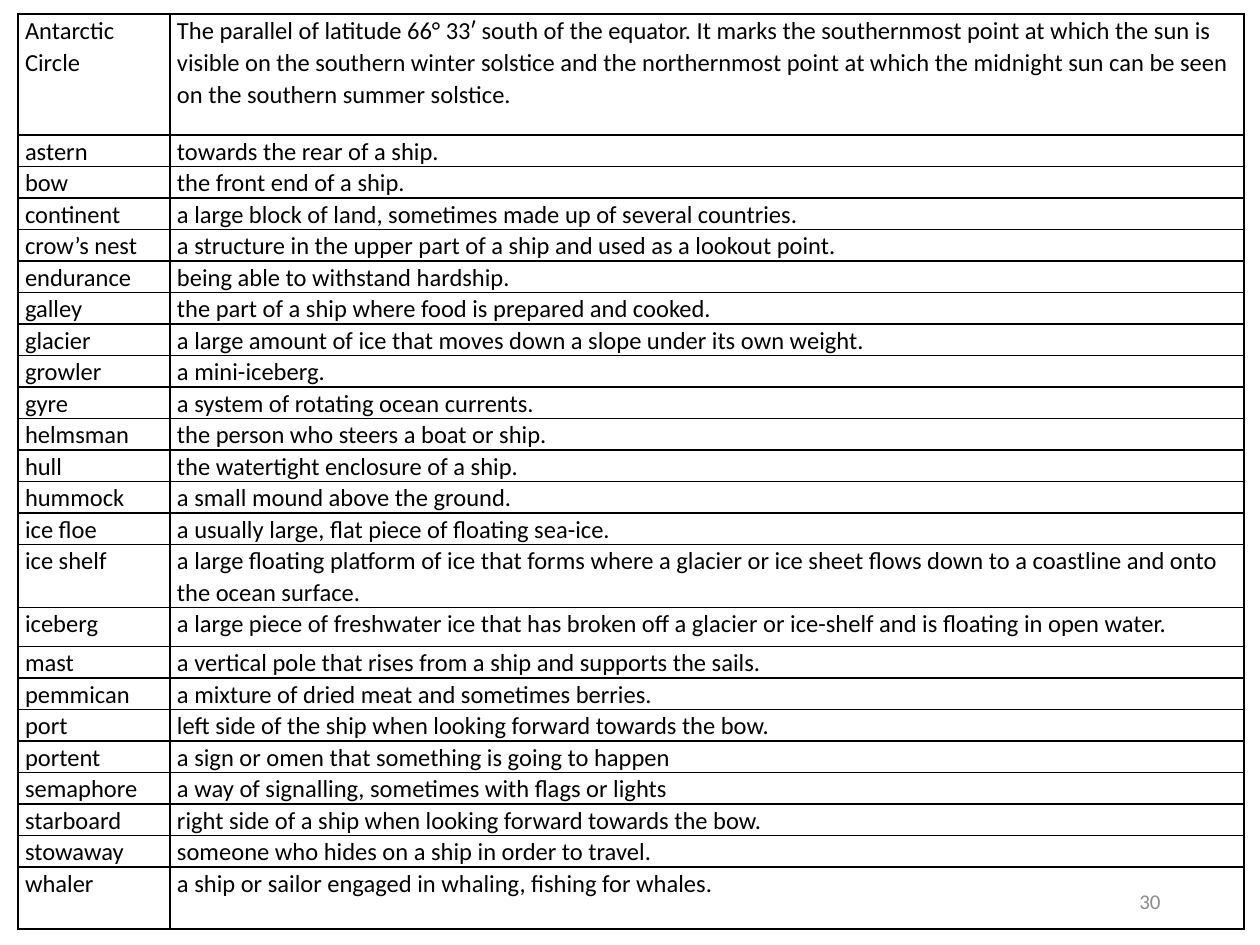
import typing

import pptx
import pptx.dml.color
import pptx.enum.text
import pptx.oxml
import pptx.oxml.ns
import pptx.util

PX_PER_INCH = 126
FONT = "Calibri"
BLACK = pptx.dml.color.RGBColor(0x00, 0x00, 0x00)
GREY = pptx.dml.color.RGBColor(0x8C, 0x8C, 0x8C)

TABLE_LEFT, TABLE_TOP, TABLE_HEIGHT = 18, 14, 886
TERM_WIDTH, MEANING_WIDTH = 152, 1074
ROW_HEIGHT = 29
CELL_INSET = 7


class Entry(typing.NamedTuple):
    term: str
    meaning: str
    height: int = ROW_HEIGHT


GLOSSARY = [
    Entry(
        "Antarctic Circle",
        "The parallel of latitude 66° 33ʹ south of the equator. It marks the "
        "southernmost point at which the sun is visible on the southern winter "
        "solstice and the northernmost point at which the midnight sun can be "
        "seen on the southern summer solstice.",
        121,
    ),
    Entry("astern", "towards the rear of a ship."),
    Entry("bow", "the front end of a ship."),
    Entry("continent", "a large block of land, sometimes made up of several countries."),
    Entry("crow’s nest", "a structure in the upper part of a ship and used as a lookout point."),
    Entry("endurance", "being able to withstand hardship."),
    Entry("galley", "the part of a ship where food is prepared and cooked."),
    Entry("glacier", "a large amount of ice that moves down a slope under its own weight."),
    Entry("growler", "a mini-iceberg."),
    Entry("gyre", "a system of rotating ocean currents."),
    Entry("helmsman", "the person who steers a boat or ship."),
    Entry("hull", "the watertight enclosure of a ship."),
    Entry("hummock", "a small mound above the ground."),
    Entry("ice floe", "a usually large, flat piece of floating sea-ice."),
    Entry(
        "ice shelf",
        "a large floating platform of ice that forms where a glacier or ice sheet "
        "flows down to a coastline and onto the ocean surface.",
        60,
    ),
    Entry(
        "iceberg",
        "a large piece of freshwater ice that has broken off a glacier or ice-shelf "
        "and is floating in open water.",
        39,
    ),
    Entry("mast", "a vertical pole that rises from a ship and supports the sails."),
    Entry("pemmican", "a mixture of dried meat and sometimes berries."),
    Entry("port", "left side of the ship when looking forward towards the bow."),
    Entry("portent", "a sign or omen that something is going to happen"),
    Entry("semaphore", "a way of signalling, sometimes with flags or lights"),
    Entry("starboard", "right side of a ship when looking forward towards the bow."),
    Entry("stowaway", "someone who hides on a ship in order to travel."),
    Entry("whaler", "a ship or sailor engaged in whaling, fishing for whales.", 62),
]


def px(length: int) -> pptx.util.Emu:
    return pptx.util.Emu(round(length * 914400 / PX_PER_INCH))


def format_font(font, size: int, color: pptx.dml.color.RGBColor) -> None:
    font.name = FONT
    font.size = pptx.util.Pt(size)
    font.bold = False
    font.color.rgb = color


def add_borders(cell) -> None:
    properties = cell._tc.get_or_add_tcPr()
    namespace = pptx.oxml.ns.nsdecls("a")
    for index, side in enumerate(("lnL", "lnR", "lnT", "lnB")):
        border = pptx.oxml.parse_xml(
            f'<a:{side} {namespace} w="{pptx.util.Pt(1)}"><a:solidFill>'
            f'<a:srgbClr val="{BLACK}"/></a:solidFill></a:{side}>'
        )
        properties.insert(index, border)


def fill_cell(cell, text: str) -> None:
    cell.fill.background()
    cell.margin_left = cell.margin_right = px(CELL_INSET)
    cell.margin_top = cell.margin_bottom = 0
    cell.text_frame.text = text
    paragraph = cell.text_frame.paragraphs[0]
    paragraph.line_spacing = 1.07
    paragraph.space_after = pptx.util.Pt(8)
    format_font(paragraph.runs[0].font, 14, BLACK)
    add_borders(cell)


def add_page_number(slide, number: int) -> None:
    text_frame = slide.shapes.add_textbox(px(890), px(876), px(283), px(50)).text_frame
    text_frame.word_wrap = True
    text_frame.vertical_anchor = pptx.enum.text.MSO_ANCHOR.MIDDLE
    text_frame.text = str(number)
    paragraph = text_frame.paragraphs[0]
    paragraph.alignment = pptx.enum.text.PP_ALIGN.RIGHT
    format_font(paragraph.runs[0].font, 12, GREY)


def add_glossary(slide, entries: list[Entry]) -> None:
    table = slide.shapes.add_table(
        len(entries), 2, px(TABLE_LEFT), px(TABLE_TOP),
        px(TERM_WIDTH + MEANING_WIDTH), px(TABLE_HEIGHT),
    ).table
    table.first_row = False
    table.horz_banding = False
    for column, width in zip(table.columns, (TERM_WIDTH, MEANING_WIDTH)):
        column.width = px(width)
    for row, entry in zip(table.rows, entries):
        row.height = px(entry.height)
        for cell, text in zip(row.cells, (entry.term, entry.meaning)):
            fill_cell(cell, text)


def main() -> None:
    presentation = pptx.Presentation()
    presentation.slide_width = px(1260)
    presentation.slide_height = px(945)
    slide = presentation.slides.add_slide(presentation.slide_layouts[6])
    add_page_number(slide, 30)
    add_glossary(slide, GLOSSARY)
    presentation.save("out.pptx")


if __name__ == "__main__":
    main()
